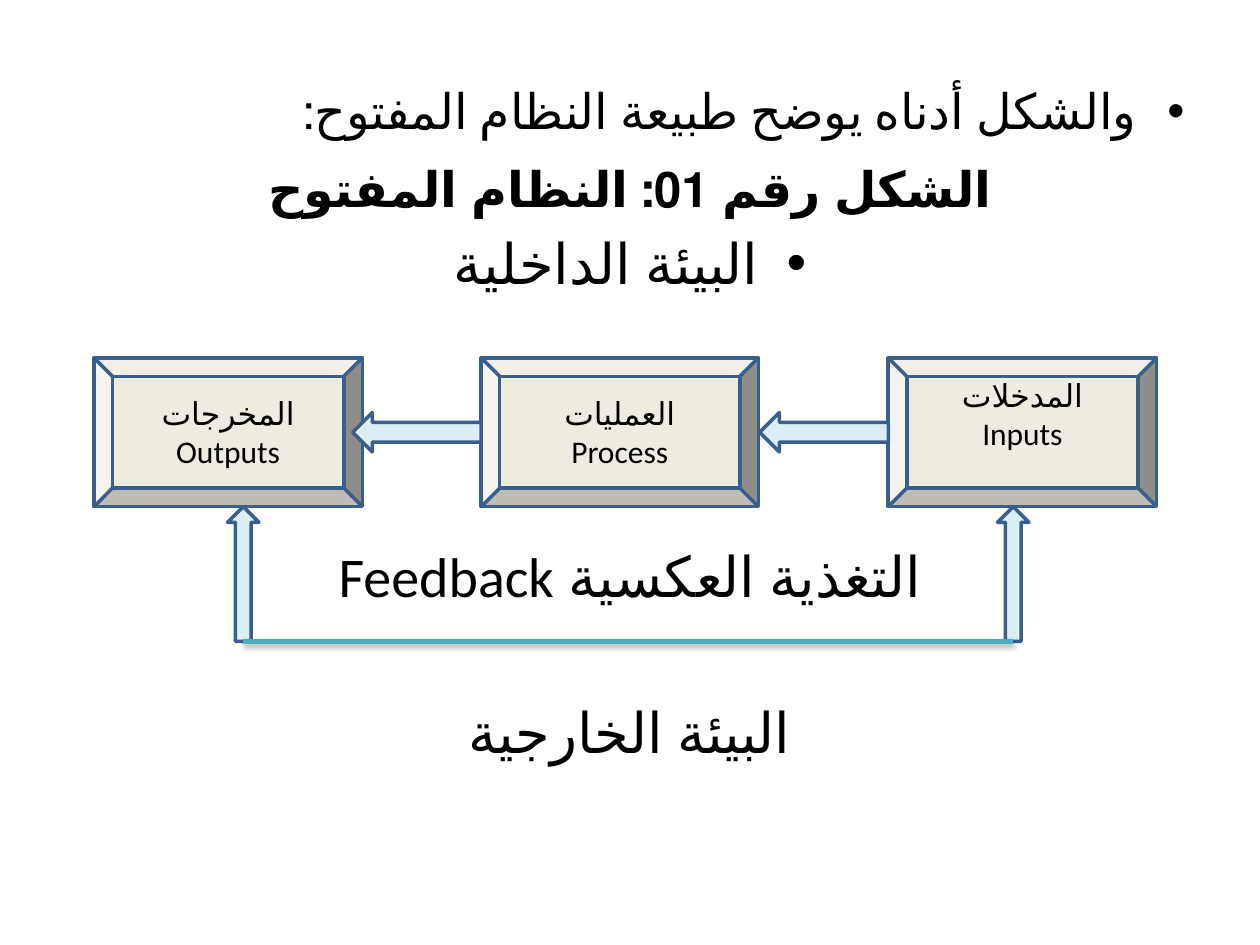
from lxml import etree
from pptx import Presentation
from pptx.dml.color import RGBColor
from pptx.enum.lang import MSO_LANGUAGE_ID
from pptx.enum.shapes import MSO_CONNECTOR, MSO_SHAPE
from pptx.enum.text import MSO_ANCHOR, MSO_AUTO_SIZE, PP_ALIGN
from pptx.oxml.ns import qn
from pptx.util import Pt

ARABIC = MSO_LANGUAGE_ID.ARABIC_ALGERIA
CENTER, JUSTIFY = PP_ALIGN.CENTER, PP_ALIGN.JUSTIFY
TOP, MIDDLE = MSO_ANCHOR.TOP, MSO_ANCHOR.MIDDLE
BEVEL, LEFT_ARROW, UP_ARROW = MSO_SHAPE.BEVEL, MSO_SHAPE.LEFT_ARROW, MSO_SHAPE.UP_ARROW
STRAIGHT = MSO_CONNECTOR.STRAIGHT

THEME = {
    "font": "Calibri",
    "text": RGBColor(0x00, 0x00, 0x00),
    "box": RGBColor(0xEE, 0xEC, 0xE1),
    "arrow": RGBColor(0xDB, 0xEE, 0xF4),
    "outline": RGBColor(0x3A, 0x5F, 0x8C),
    "feedback": RGBColor(0x4B, 0xAC, 0xC6),
    "lead": 28, "body": 32, "label": 18,
}

BODY = [
    {"text": "والشكل أدناه يوضح طبيعة النظام المفتوح:", "size": "lead", "bullet": True,
     "format": {"alignment": JUSTIFY, "line_spacing": 1.15, "space_before": Pt(5.6)}},
    {"text": "الشكل رقم 01: النظام المفتوح", "size": "lead", "bold": True,
     "format": {"alignment": CENTER, "line_spacing": 1.15, "space_before": Pt(5.6)}},
    {"text": "البيئة الداخلية", "size": "body", "bullet": True,
     "format": {"alignment": CENTER, "space_before": Pt(6.4)}},
    {"text": "التغذية العكسية Feedback", "size": "body",
     "format": {"alignment": CENTER, "space_before": Pt(140.5)}},
    {"text": "البيئة الخارجية", "size": "body",
     "format": {"alignment": CENTER, "space_before": Pt(51)}},
]
STAGES = [
    {"lines": ("المدخلات", "Inputs"), "left": 507.6, "width": 153.4,
     "frame": {"vertical_anchor": TOP, "margin_top": 0}},
    {"lines": ("العمليات", "Process"), "left": 275, "width": 158.4,
     "frame": {"vertical_anchor": MIDDLE}},
    {"lines": ("المخرجات", "Outputs"), "left": 53.7, "width": 153.4,
     "frame": {"vertical_anchor": MIDDLE}},
]
BODY_AREA = (36, 37.5, 648, 445)
STAGE_TOP, STAGE_HEIGHT = 204.5, 85
FLOW_LENGTH, FLOW_THICKNESS = 73.5, 22.5
RETURN_LENGTH, RETURN_THICKNESS = 77, 18
RETURN_CENTERS = (579, 139)
BULLET_INDENT = Pt(27)


def set_format(target, values):
    for name, value in values.items():
        setattr(target, name, value)


def write_run(paragraph, text, size, bold=False):
    run = paragraph.add_run()
    run.text = text
    set_format(run.font, {"name": THEME["font"], "size": Pt(THEME[size]), "bold": bold,
                          "language_id": ARABIC})
    run.font.color.rgb = THEME["text"]


def get_paragraph(frame, index):
    return frame.add_paragraph() if index else frame.paragraphs[0]


def set_direction_and_bullet(paragraph, bullet):
    properties = paragraph._p.get_or_add_pPr()
    indent = BULLET_INDENT if bullet else 0
    for name, value in {"rtl": 1, "marL": indent, "indent": -indent}.items():
        properties.set(name, str(value))
    if bullet:
        etree.SubElement(properties, qn("a:buFont")).set("typeface", "Arial")
        etree.SubElement(properties, qn("a:buChar")).set("char", "•")
    else:
        etree.SubElement(properties, qn("a:buNone"))


def add_body(slide):
    placeholder = slide.placeholders[1]
    set_format(placeholder, dict(zip(("left", "top", "width", "height"), map(Pt, BODY_AREA))))
    frame = placeholder.text_frame
    set_format(frame, {"word_wrap": True, "auto_size": MSO_AUTO_SIZE.NONE})
    for index, item in enumerate(BODY):
        paragraph = get_paragraph(frame, index)
        set_format(paragraph, item["format"])
        set_direction_and_bullet(paragraph, item.get("bullet", False))
        write_run(paragraph, item["text"], item["size"], item.get("bold", False))


def add_outlined(slide, kind, left, top, width, height, fill):
    shape = slide.shapes.add_shape(kind, Pt(left), Pt(top), Pt(width), Pt(height))
    shape.shadow.inherit = False
    shape.fill.solid()
    shape.fill.fore_color.rgb = THEME[fill]
    shape.line.color.rgb = THEME["outline"]
    shape.line.width = Pt(2)
    return shape


def add_stage(slide, stage):
    shape = add_outlined(slide, BEVEL, stage["left"], STAGE_TOP,
                         stage["width"], STAGE_HEIGHT, "box")
    frame = shape.text_frame
    set_format(frame, {"word_wrap": True, **stage["frame"]})
    for index, line in enumerate(stage["lines"]):
        paragraph = get_paragraph(frame, index)
        paragraph.alignment = CENTER
        write_run(paragraph, line, "label")


def add_feedback_line(slide, top):
    start, end = sorted(RETURN_CENTERS)
    line = slide.shapes.add_connector(STRAIGHT, Pt(start), Pt(top), Pt(end), Pt(top))
    line.line.color.rgb = THEME["feedback"]
    line.line.width = Pt(3)
    effects = etree.SubElement(line._element.spPr, qn("a:effectLst"))
    shadow = etree.SubElement(effects, qn("a:outerShdw"))
    for name, value in {"blurRad": Pt(3.1), "dist": Pt(1.8), "dir": 90 * 60000,
                        "rotWithShape": 0}.items():
        shadow.set(name, str(value))
    color = etree.SubElement(shadow, qn("a:srgbClr"))
    color.set("val", str(THEME["text"]))
    etree.SubElement(color, qn("a:alpha")).set("val", "35000")


def main():
    presentation = Presentation()
    set_format(presentation, {"slide_width": Pt(720), "slide_height": Pt(540)})
    slide = presentation.slides.add_slide(presentation.slide_layouts[1])
    title = slide.shapes.title._element
    title.getparent().remove(title)
    add_body(slide)
    for stage in STAGES:
        add_stage(slide, stage)
    flow_top = STAGE_TOP + (STAGE_HEIGHT - FLOW_THICKNESS) / 2
    for stage in STAGES[:-1]:
        add_outlined(slide, LEFT_ARROW, stage["left"] - FLOW_LENGTH, flow_top,
                     FLOW_LENGTH, FLOW_THICKNESS, "arrow")
    return_top = STAGE_TOP + STAGE_HEIGHT
    for center in RETURN_CENTERS:
        add_outlined(slide, UP_ARROW, center - RETURN_THICKNESS / 2, return_top,
                     RETURN_THICKNESS, RETURN_LENGTH, "arrow")
    add_feedback_line(slide, return_top + RETURN_LENGTH)
    presentation.save("out.pptx")


if __name__ == "__main__":
    main()
